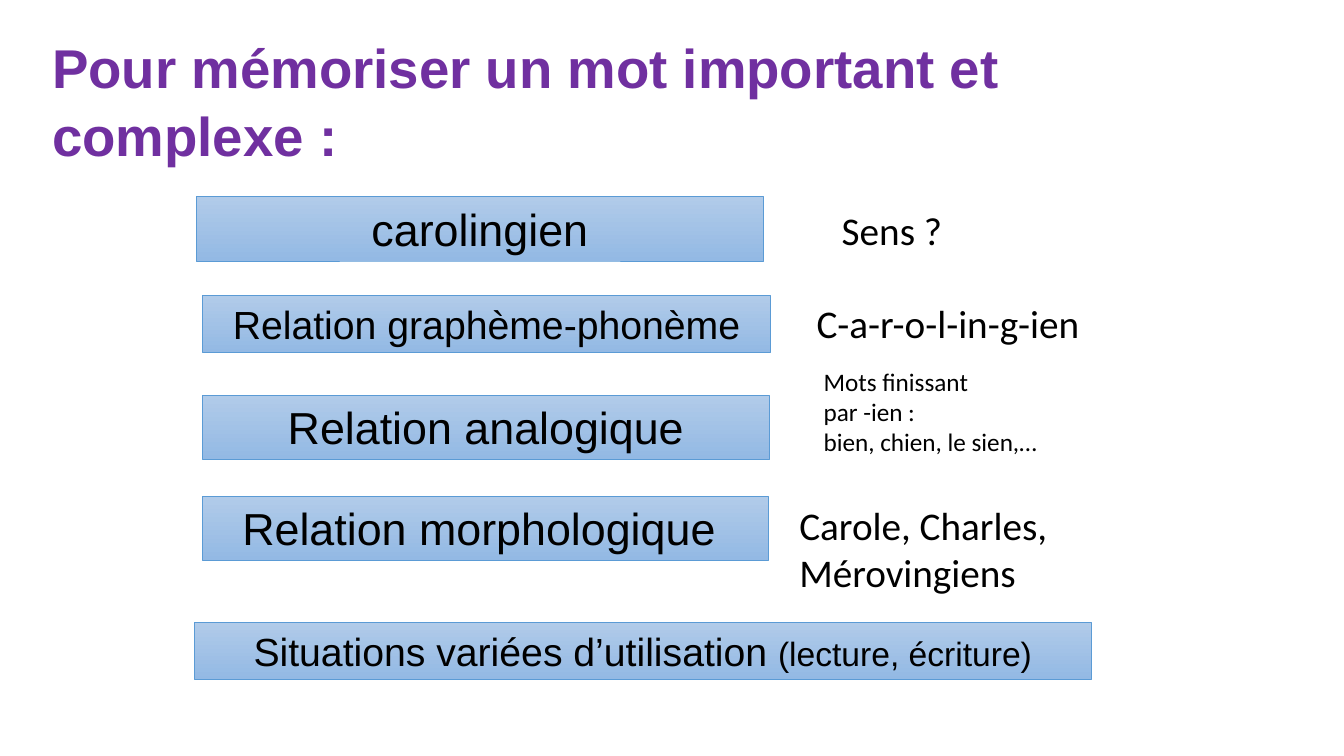
import pptx
import pptx.dml.color
import pptx.enum.shapes
import pptx.enum.text
import pptx.util
from pptx.util import Inches

COLORS = {
    "title": "7030A0",
    "text": "000000",
    "box_top": "B1CBE9",
    "box_bottom": "93B9E4",
    "box_line": "5B9BD5",
}


def rgb(name):
    return pptx.dml.color.RGBColor.from_string(COLORS[name])


def write_lines(shape, lines, size, font_name, color="text"):
    """Fill a shape with one paragraph per line and return its text frame."""
    frame = shape.text_frame
    frame.text = "\n".join(lines)
    for paragraph in frame.paragraphs:
        paragraph.font.size = pptx.util.Pt(size)
        paragraph.font.name = font_name
        paragraph.font.color.rgb = rgb(color)
    return frame


presentation = pptx.Presentation()
presentation.slide_width = Inches(13.33)
presentation.slide_height = Inches(7.5)
slide = presentation.slides.add_slide(presentation.slide_layouts[6])

title = slide.shapes.add_textbox(Inches(0.42), Inches(0.25), Inches(9.83), Inches(1.41))
title_frame = write_lines(
    title, ["Pour mémoriser un mot important et complexe :"], 39, "Arial", "title"
)
title_frame.word_wrap = True
title_frame.paragraphs[0].font.bold = True
title_frame.paragraphs[0].line_spacing = 1.05

# Steps: left, top, width, height, text size, wording
steps = [
    (1.95, 1.95, 5.62, 0.64, 32, "carolingien"),
    (2.01, 2.93, 5.63, 0.57, 28, "Relation graphème-phonème"),
    (2.01, 3.92, 5.62, 0.64, 32, "Relation analogique"),
    (2.01, 4.92, 5.61, 0.64, 32, "Relation morphologique "),
    (1.93, 6.17, 8.89, 0.57, 28, "Situations variées d’utilisation "),
]
for left, top, width, height, size, wording in steps:
    step = slide.shapes.add_shape(
        pptx.enum.shapes.MSO_SHAPE.RECTANGLE,
        Inches(left), Inches(top), Inches(width), Inches(height),
    )
    step.shadow.inherit = False
    step.fill.gradient()
    step.fill.gradient_angle = 270
    for stop, color in zip(step.fill.gradient_stops, ("box_top", "box_bottom")):
        stop.color.rgb = rgb(color)
    step.fill.gradient_stops[0].position = 0
    step.fill.gradient_stops[1].position = 1
    step.line.color.rgb = rgb("box_line")
    step.line.width = pptx.util.Pt(0.5)
    step_frame = write_lines(step, [wording], size, "Arial")
    step_frame.word_wrap = True
    step_frame.vertical_anchor = pptx.enum.text.MSO_ANCHOR.TOP
    step_frame.paragraphs[0].alignment = pptx.enum.text.PP_ALIGN.CENTER

# The last step ends with a smaller remark
remark = step_frame.paragraphs[0].add_run()
remark.text = "(lecture, écriture)"
remark.font.size = pptx.util.Pt(24)

# Examples: left, top, width, height, text size, wrapping, lines
examples = [
    (8.25, 2, 1.21, 0.57, 28, False, ["Sens ?"]),
    (8, 2.92, 2.85, 0.57, 28, False, ["C-a-r-o-l-in-g-ien"]),
    (8.07, 3.58, 2.35, 1.01, 18, False,
     ["Mots finissant", "par -ien :", "bien, chien, le sien,…"]),
    (7.83, 4.92, 3.55, 1.03, 28, True, ["Carole, Charles,", "Mérovingiens"]),
]
for left, top, width, height, size, wraps, lines in examples:
    example = slide.shapes.add_textbox(
        Inches(left), Inches(top), Inches(width), Inches(height)
    )
    write_lines(example, lines, size, "Calibri").word_wrap = wraps

presentation.save("out.pptx")
